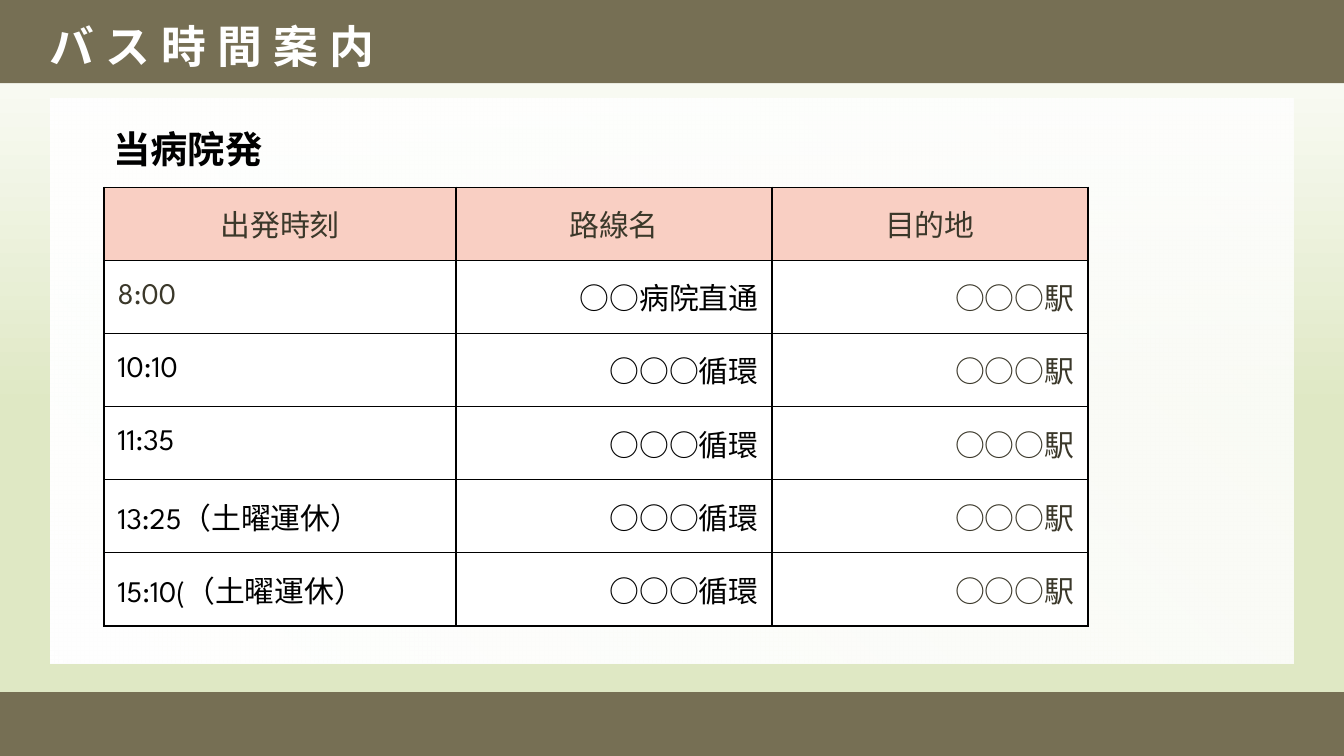
from typing import NamedTuple

from lxml.etree import SubElement
from pptx import Presentation
from pptx.dml.color import RGBColor
from pptx.enum.shapes import MSO_SHAPE as Shape
from pptx.enum.text import MSO_ANCHOR as Anchor, PP_ALIGN as Align
from pptx.oxml import parse_xml
from pptx.oxml.ns import nsdecls, qn
from pptx.util import Emu, Pt

PX = 5715
OLIVE, PINK, WHITE, BLACK, DARK = "766F54", "F9CFC3", "FFFFFF", "000000", "3B382A"
LATIN, JAPANESE = "League Spartan", "Noto Sans CJK JP"


class Area(NamedTuple):
    left: int
    top: int
    width: int
    height: int


class Style(NamedTuple):
    size: int
    color: str
    font: str = LATIN
    bold: bool = False
    align: Align = Align.LEFT


class Departure(NamedTuple):
    time: str
    route: str
    time_color: str = BLACK
    destination: str = "○○○駅"


BANDS = [Area(0, 0, 1600, 99), Area(0, 824, 1600, 76)]
TITLE = Area(43, 14, 1299, 80)
PANEL = Area(60, 118, 1480, 672)
HEADING = Area(119, 142, 1390, 70)
TIMETABLE = Area(124, 223, 1171, 522)
COLUMNS = [419, 376, 376]
HEADERS = ["出発時刻", "路線名", "目的地"]
DEPARTURES = [
    Departure("8:00", "○○病院直通", DARK),
    Departure("10:10", "○○○循環"),
    Departure("11:35", "○○○循環"),
    Departure("13:25（土曜運休）", "○○○循環"),
    Departure("15:10(（土曜運休）", "○○○循環"),
]


def px(length: int) -> Emu:
    """Turn pixels into EMU."""
    return Emu(length * PX)


def place(area: Area) -> list[Emu]:
    """Return an area's position and size in EMU."""
    return [px(length) for length in area]


def rgb(color: str) -> RGBColor:
    """Turn a hex string into a colour."""
    return RGBColor.from_string(color)


def write(frame, text: str, style: Style) -> None:
    """Put one styled paragraph into a text frame."""
    para = frame.paragraphs[0]
    para.add_run().text = text
    para.alignment = style.align
    font = para.font
    font.name, font.size, font.bold = style.font, Pt(style.size), style.bold
    font.color.rgb = rgb(style.color)


def paint_background(page) -> None:
    """Fade the page from white down to pale green."""
    fill = page.background.fill
    fill.gradient()
    fill.gradient_angle = 270
    for stop, color, position in zip(fill.gradient_stops, (WHITE, "DFE8C4"), (0, 0.54)):
        stop.color.rgb = rgb(color)
        stop.position = position


def add_rectangle(page, area: Area, color: str):
    """Draw a plain rectangle without outline."""
    box = page.shapes.add_shape(Shape.RECTANGLE, *place(area))
    box.shadow.inherit = False
    box.fill.solid()
    box.fill.fore_color.rgb = rgb(color)
    box.line.fill.background()
    return box


def add_panel(page) -> None:
    """Draw the white panel that turns translucent away from its corner."""
    panel = add_rectangle(page, PANEL, WHITE)
    solid = panel.element.spPr.find(qn("a:solidFill"))
    gradient = parse_xml(
        f'<a:gradFill {nsdecls("a")} rotWithShape="1"><a:gsLst>'
        f'<a:gs pos="0"><a:srgbClr val="{WHITE}"/></a:gs>'
        f'<a:gs pos="100000"><a:srgbClr val="{WHITE}"><a:alpha val="80000"/></a:srgbClr></a:gs>'
        '</a:gsLst><a:path path="circle"><a:fillToRect t="100000" r="100000"/></a:path>'
        "</a:gradFill>"
    )
    solid.getparent().replace(solid, gradient)


def add_title(page) -> None:
    """Place the widely spaced page title on the top band."""
    title = page.shapes.title
    title.element.getparent().append(title.element)
    title.left, title.top, title.width, title.height = place(TITLE)
    frame = title.text_frame
    frame.vertical_anchor = Anchor.TOP
    write(frame, "バス時間案内", Style(24, WHITE, JAPANESE, True))
    frame.paragraphs[0].runs[0]._r.get_or_add_rPr().set("spc", "600")


def add_heading(page) -> None:
    """Write the heading above the timetable."""
    box = page.shapes.add_textbox(*place(HEADING))
    box.text_frame.word_wrap = True
    write(box.text_frame, "当病院発", Style(20, BLACK, bold=True))


def fill_cell(cell, text: str, style: Style, color: str) -> None:
    """Write, outline and fill one table cell."""
    write(cell.text_frame, text, style)
    cell.vertical_anchor = Anchor.MIDDLE
    properties = cell._tc.get_or_add_tcPr()
    for side in ("lnL", "lnR", "lnT", "lnB"):
        line = SubElement(properties, qn(f"a:{side}"), w=str(Pt(1)))
        SubElement(SubElement(line, qn("a:solidFill")), qn("a:srgbClr"), val=BLACK)
    cell.fill.solid()
    cell.fill.fore_color.rgb = rgb(color)


def add_timetable(page) -> None:
    """Build the table of departures."""
    row_count = len(DEPARTURES) + 1
    table = page.shapes.add_table(row_count, len(COLUMNS), *place(TIMETABLE)).table
    for column, width in zip(table.columns, COLUMNS):
        column.width = px(width)
    for row in table.rows:
        row.height = px(TIMETABLE.height // row_count)
    for column, header in enumerate(HEADERS):
        fill_cell(table.cell(0, column), header, Style(16, DARK, align=Align.CENTER), PINK)
    for row, bus in enumerate(DEPARTURES, 1):
        entries = [
            (bus.time, Style(16, bus.time_color)),
            (bus.route, Style(16, BLACK, align=Align.RIGHT)),
            (bus.destination, Style(16, DARK, align=Align.RIGHT)),
        ]
        for column, (text, style) in enumerate(entries):
            fill_cell(table.cell(row, column), text, style, WHITE)


def main() -> None:
    """Build and save the bus timetable slide."""
    deck = Presentation()
    deck.slide_width, deck.slide_height = px(1600), px(900)
    page = deck.slides.add_slide(deck.slide_layouts[5])
    paint_background(page)
    for band in BANDS:
        add_rectangle(page, band, OLIVE)
    add_title(page)
    add_panel(page)
    add_heading(page)
    add_timetable(page)
    deck.save("out.pptx")


if __name__ == "__main__":
    main()
